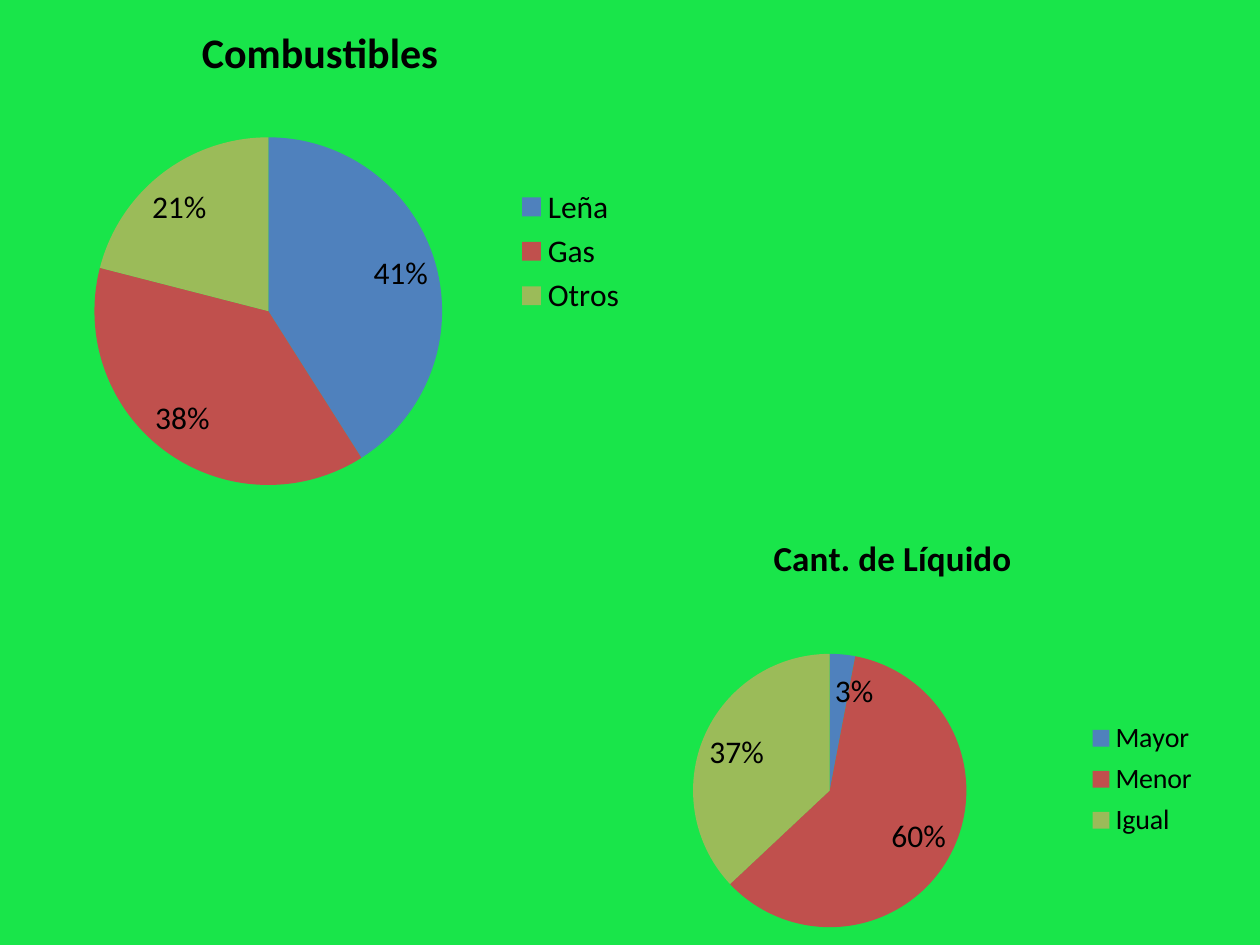
"""Build a slide with two pie charts about fuels and amount of liquid."""
import dataclasses

import pptx
import pptx.chart.data
import pptx.dml.color
import pptx.enum.chart
import pptx.oxml
import pptx.oxml.ns
import pptx.util
from pptx.util import Inches


@dataclasses.dataclass(frozen=True)
class Theme:
    font: str = "Calibri"
    background: str = "19E54A"
    text: str = "000000"
    slices: tuple = ("4F81BD", "C0504D", "9BBB59")
    label_size: int = 18


theme = Theme()


def style_font(font, size):
    font.name = theme.font
    font.size = pptx.util.Pt(size)
    font.color.rgb = pptx.dml.color.RGBColor.from_string(theme.text)


def set_layout(parent, index, modes, bounds, frame):
    for old_layout in parent.findall(pptx.oxml.ns.qn("c:layout")):
        parent.remove(old_layout)
    sizes = frame[2:] * 2
    values = "".join(f'<c:{name} val="{length / size:.4f}"/>'
                     for name, length, size in zip("xywh", bounds, sizes))
    parent.insert(index, pptx.oxml.parse_xml(
        f'<c:layout {pptx.oxml.ns.nsdecls("c")}><c:manualLayout>'
        f'{modes}{values}</c:manualLayout></c:layout>'))


edges = '<c:xMode val="edge"/><c:yMode val="edge"/>'
inner_edges = '<c:layoutTarget val="inner"/>' + edges

deck = pptx.Presentation()
deck.slide_width, deck.slide_height = Inches(10), Inches(7.5)
page = deck.slides.add_slide(deck.slide_layouts[6])
page.background.fill.solid()
page.background.fill.fore_color.rgb = pptx.dml.color.RGBColor.from_string(theme.background)

pies = [
    dict(title="Combustibles", title_size=24, legend_size=18,
         values={"Leña": 41, "Gas": 38, "Otros": 21},
         frame=(0, 0, 5.08, 3.99), pie=(0.75, 1.09, 2.76, 2.76)),
    dict(title="Cant. de Líquido", title_size=20, legend_size=16,
         values={"Mayor": 3, "Menor": 60, "Igual": 37},
         frame=(4.29, 4.06, 5.59, 3.44), pie=(1.21, 1.13, 2.17, 2.17),
         legend=(4.31, 1.61, 0.93, 1.03), first_label_shift=(0.25, 0.08)),
]

for item in pies:
    frame = item["frame"]
    data = pptx.chart.data.CategoryChartData()
    data.categories = list(item["values"])
    data.add_series("Series 1", list(item["values"].values()))
    chart = page.shapes.add_chart(
        pptx.enum.chart.XL_CHART_TYPE.PIE, *map(Inches, frame), data).chart
    style_font(chart.font, theme.label_size)

    chart.has_title = True
    chart.chart_title.include_in_layout = False
    chart.chart_title.text_frame.text = item["title"]
    span = chart.chart_title.text_frame.paragraphs[0].runs[0]
    style_font(span.font, item["title_size"])
    span.font.bold = True

    chart.has_legend = True
    legend = chart.legend
    legend.position = pptx.enum.chart.XL_LEGEND_POSITION.RIGHT
    legend.include_in_layout = False
    style_font(legend.font, item["legend_size"])
    if "legend" in item:
        set_layout(legend._element, 1, edges, item["legend"], frame)

    plot = chart.plots[0]
    plot.vary_by_categories = True
    series = plot.series[0]
    for index, slice_color in enumerate(theme.slices):
        fill = series.points[index].format.fill
        fill.solid()
        fill.fore_color.rgb = pptx.dml.color.RGBColor.from_string(slice_color)

    labels = series.data_labels
    labels.show_percentage = True
    labels.show_value = False
    labels.number_format = "0%"
    labels.number_format_is_linked = False
    labels.position = pptx.enum.chart.XL_LABEL_POSITION.BEST_FIT
    style_font(labels.font, theme.label_size)

    if "first_label_shift" in item:
        label = series.points[0].data_label
        style_font(label.font, theme.label_size)
        label.position = pptx.enum.chart.XL_LABEL_POSITION.INSIDE_END
        element = labels._element.find(pptx.oxml.ns.qn("c:dLbl"))
        element.find(pptx.oxml.ns.qn("c:showVal")).set("val", "0")
        element.find(pptx.oxml.ns.qn("c:showPercent")).set("val", "1")
        set_layout(element, 1, "", item["first_label_shift"], frame)

    set_layout(plot._element.getparent(), 0, inner_edges, item["pie"], frame)

deck.save("out.pptx")
